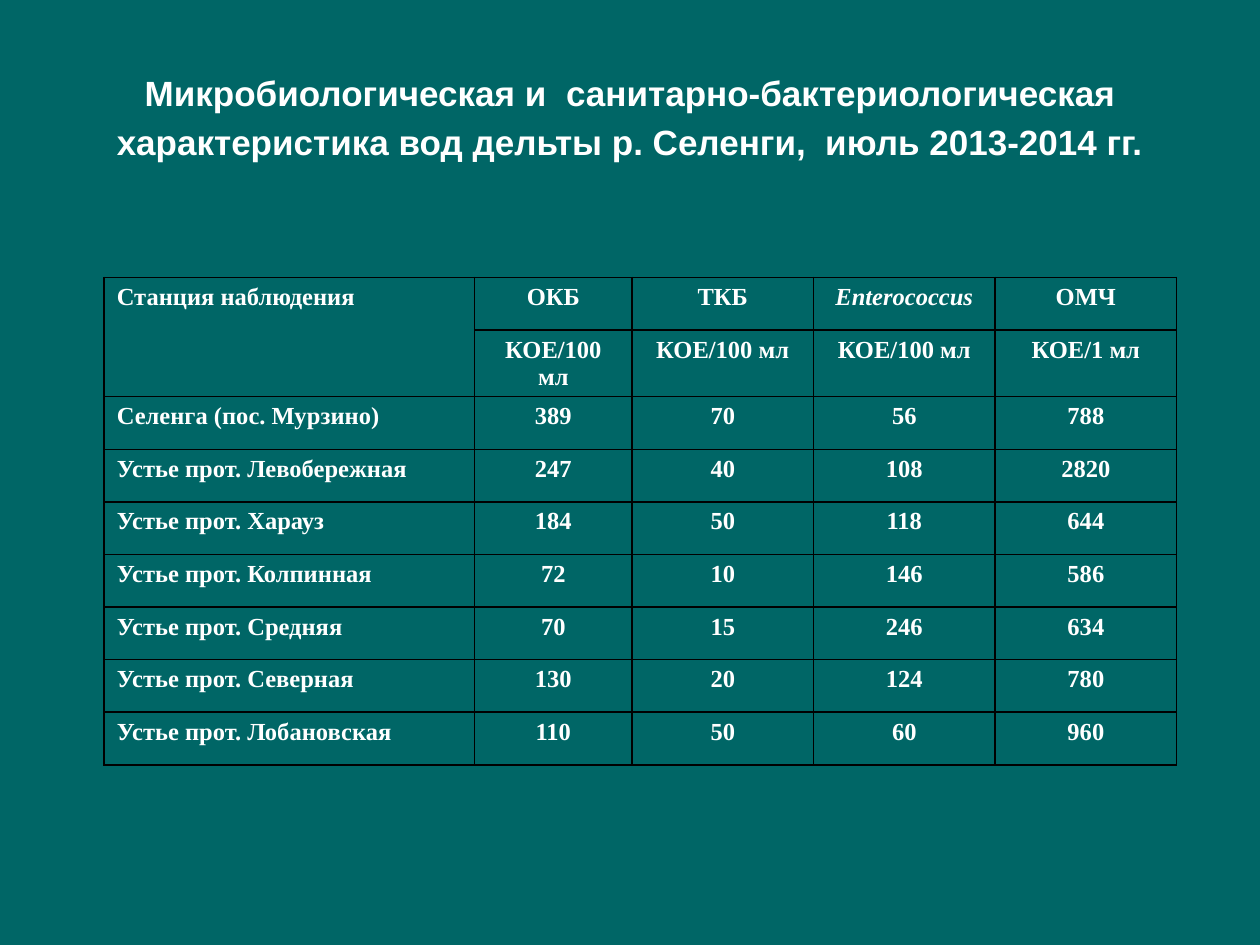
"""Build the slide with the table on water quality in the Selenga delta."""
from lxml import etree
from pptx import Presentation
from pptx.dml.color import RGBColor
from pptx.enum.text import MSO_ANCHOR, MSO_AUTO_SIZE, PP_ALIGN
from pptx.oxml.ns import qn
from pptx.util import Cm, Pt

LEFT, MID = PP_ALIGN.LEFT, PP_ALIGN.CENTER
MIDDLE, NONE = MSO_ANCHOR.MIDDLE, MSO_AUTO_SIZE.NONE
WHITE, BLACK, TEAL = "FFFFFF", "000000", "006666"

HEADS = ["ОКБ", "ТКБ", "Enterococcus", "ОМЧ"]
ROWS = [
    ["Станция наблюдения", *HEADS],
    ["", "КОЕ/100 мл", "КОЕ/100 мл", "КОЕ/100 мл", "КОЕ/1 мл"],
    ["Селенга (пос. Мурзино)", 389, 70, 56, 788],
    ["Устье прот. Левобережная", 247, 40, 108, 2820],
    ["Устье прот. Харауз", 184, 50, 118, 644],
    ["Устье прот. Колпинная", 72, 10, 146, 586],
    ["Устье прот. Средняя", 70, 15, 246, 634],
    ["Устье прот. Северная", 130, 20, 124, 780],
    ["Устье прот. Лобановская", 110, 50, 60, 960],
]
WIDTHS = [7.47, 3.17, 3.66, 3.66, 3.66]
TITLE = [
    ("Микробиологическая и", 20),
    (" ", 40),
    ("санитарно-бактериологическая характеристика вод дельты р. Селенги,  июль 2013-2014 гг.", 20),
]


def paint(target, color):
    target.rgb = RGBColor.from_string(color)


def write(para, text, **form):
    run = para.add_run()
    run.text = text
    for key, value in form.items():
        setattr(run.font, key, value)
    paint(run.font.color, WHITE)


deck = Presentation()
deck.slide_width, deck.slide_height = Cm(25.4), Cm(19.05)
slide = deck.slides.add_slide(deck.slide_layouts[5])
back = slide.background.fill
back.solid()
paint(back.fore_color, TEAL)

title = slide.shapes.title
place = {"left": Cm(1.27), "top": Cm(0.76), "width": Cm(22.86), "height": Cm(3.18)}
for key, value in place.items():
    setattr(title, key, value)
frame = title.text_frame
style = {"auto_size": NONE, "word_wrap": True, "vertical_anchor": MIDDLE,
         "margin_top": Cm(0), "margin_bottom": Cm(0.68)}
for key, value in style.items():
    setattr(frame, key, value)
para = frame.paragraphs[0]
para.alignment = MID
for text, size in TITLE:
    write(para, text, name="Arial", size=Pt(size), bold=True)

high = Cm(1.06)
grid = slide.shapes.add_table(len(ROWS), len(WIDTHS), Cm(2.1), Cm(5.59),
                              Cm(sum(WIDTHS)), high * len(ROWS)).table
for col, width in zip(grid.columns, WIDTHS):
    col.width = Cm(width)
for r, row in enumerate(ROWS):
    grid.rows[r].height = high
    for c, value in enumerate(row):
        cell = grid.cell(r, c)
        props = cell._tc.get_or_add_tcPr()
        for side in ("a:lnL", "a:lnR", "a:lnT", "a:lnB"):
            line = etree.SubElement(props, qn(side), w=str(Pt(1)))
            fill = etree.SubElement(line, qn("a:solidFill"))
            etree.SubElement(fill, qn("a:srgbClr"), val=BLACK)
        cell.fill.background()
        para = cell.text_frame.paragraphs[0]
        para.alignment = MID if c else LEFT
        if value != "":
            write(para, str(value), name="Times New Roman", size=Pt(14),
                  bold=True, italic=value == "Enterococcus")
grid.cell(0, 0).merge(grid.cell(1, 0))

deck.save("out.pptx")
